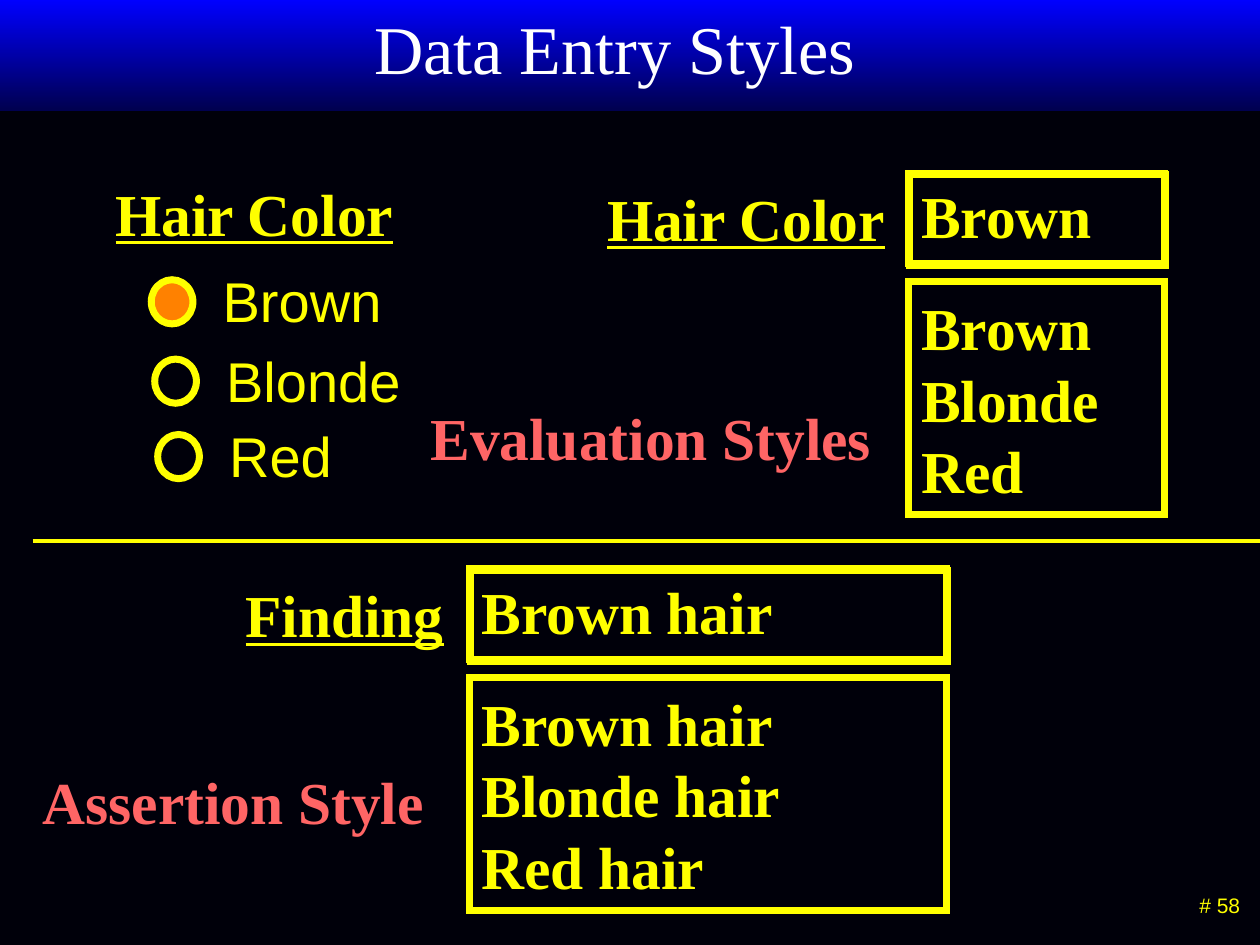
import pptx
import pptx.util
import pptx.dml.color
import pptx.oxml
from pptx.util import Cm, Pt
from pptx.enum.shapes import MSO_CONNECTOR, MSO_SHAPE
from pptx.enum.text import MSO_ANCHOR, PP_ALIGN

SERIF, SANS = "Times New Roman", "Arial"
YELLOW, CORAL, ORANGE, WHITE = "FFFF00", "FF6565", "FF8100", "FFFFFF"
NAVY, BLUE, BACKGROUND = "00004F", "0000FF", "00000A"


def color(value):
    return pptx.dml.color.RGBColor.from_string(value)


def append_xml(parent, tag, **attributes):
    parent.append(parent.makeelement(pptx.oxml.ns.qn(tag), attributes))


def write(shape, text, size=34, font=SERIF, ink=YELLOW, bold=False, underline=False,
          align=PP_ALIGN.LEFT, anchor=MSO_ANCHOR.MIDDLE, wrap=True):
    """Fill a shape with one paragraph per line of text."""
    frame = shape.text_frame
    frame.word_wrap = wrap
    frame.vertical_anchor = anchor
    frame.text = text
    for para in frame.paragraphs:
        para.alignment = align
        para.space_before = Pt(0)
        for span in para.runs:
            span.font.size = Pt(size)
            span.font.name = font
            span.font.bold = bold
            span.font.underline = underline
            span.font.color.rgb = color(ink)


def add_text(slide, text, left, top, width, height, **style):
    box = slide.shapes.add_textbox(Cm(left), Cm(top), Cm(width), Cm(height))
    write(box, text, **style)


def add_outline(slide, kind, left, top, width, height, fill=None):
    shape = slide.shapes.add_shape(kind, Cm(left), Cm(top), Cm(width), Cm(height))
    shape.shadow.inherit = False
    shape.line.color.rgb = color(YELLOW)
    shape.line.width = Pt(4)
    append_xml(shape.line._get_or_add_ln(), "a:miter", lim="800000")
    if fill:
        shape.fill.solid()
        shape.fill.fore_color.rgb = color(fill)
    else:
        shape.fill.background()
    return shape


def add_option(slide, text, left, top, fill=None):
    """Draw a radio button with its label to the right."""
    add_outline(slide, MSO_SHAPE.OVAL, left, top, 0.84, 0.89, fill)
    add_text(slide, text, left + 1.19, top - 0.38, 4.6, 1.6, size=32, font=SANS)


def add_dropdown(slide, choices, left, top, width):
    """Draw a field with the first choice, a second offset frame, and the open list."""
    add_outline(slide, MSO_SHAPE.RECTANGLE, left + 0.02, top + 0.03, width, 1.83)
    field = add_outline(slide, MSO_SHAPE.RECTANGLE, left, top, width, 1.83)
    write(field, choices[0], bold=True, anchor=MSO_ANCHOR.TOP)
    listing = add_outline(slide, MSO_SHAPE.RECTANGLE, left, top + 2.19, width, 4.7)
    write(listing, "\n".join(choices), bold=True)


def add_divider(slide, left, right, top):
    line = slide.shapes.add_connector(
        MSO_CONNECTOR.STRAIGHT, Cm(left), Cm(top), Cm(right), Cm(top))
    line.line.color.rgb = color(YELLOW)
    line.line.width = Pt(2.25)
    append_xml(line._element.spPr, "a:effectLst")


def add_title_band(slide):
    """Draw the gradient band behind everything else."""
    band = slide.shapes.add_shape(MSO_SHAPE.RECTANGLE, 0, 0, Cm(25.4), Cm(2.24))
    band.shadow.inherit = False
    band.line.fill.background()
    band.fill.gradient()
    band.fill.gradient_angle = 90
    for stop, shade in zip(band.fill.gradient_stops, (NAVY, BLUE)):
        stop.color.rgb = color(shade)
    slide.shapes._spTree.insert(2, band._element)


def set_title(slide, text):
    title = slide.shapes.title
    title.left, title.top, title.width, title.height = Cm(1.6), 0, Cm(21.59), Cm(3.18)
    write(title, text, size=39, ink=WHITE, align=PP_ALIGN.CENTER, anchor=MSO_ANCHOR.TOP)


def main():
    deck = pptx.Presentation()
    deck.slide_width, deck.slide_height = Cm(25.4), Cm(19.05)
    slide = deck.slides.add_slide(deck.slide_layouts[5])
    slide.background.fill.solid()
    slide.background.fill.fore_color.rgb = color(BACKGROUND)
    add_title_band(slide)
    set_title(slide, "Data Entry Styles")

    for text, left, top, width in (("Hair Color", 2.08, 3.43, 6.15),
                                   ("Hair Color", 11.99, 3.53, 6.15),
                                   ("Finding", 4.7, 11.53, 4.52)):
        add_text(slide, text, left, top, width, 1.7, bold=True, underline=True, wrap=False)
    for text, left, top, width in (("Evaluation Styles", 8.43, 7.95, 9.42),
                                   ("Assertion Style", 0.61, 15.29, 8.2)):
        add_text(slide, text, left, top, width, 1.7, ink=CORAL, bold=True, wrap=False)

    add_option(slide, "Brown", 3.05, 5.64, fill=ORANGE)
    add_option(slide, "Blonde", 3.12, 7.24)
    add_option(slide, "Red", 3.18, 8.76)

    colors = ["Brown", "Blonde", "Red"]
    add_dropdown(slide, colors, 18.32, 3.49, 5.16)
    add_dropdown(slide, [f"{name} hair" for name in colors], 9.46, 11.47, 9.63)
    add_divider(slide, 0.66, 25.4, 10.9)

    add_text(slide, "# 58", 22.61, 17.82, 2.64, 0.86, size=12, font=SANS,
             align=PP_ALIGN.RIGHT)
    deck.save("out.pptx")


if __name__ == "__main__":
    main()
